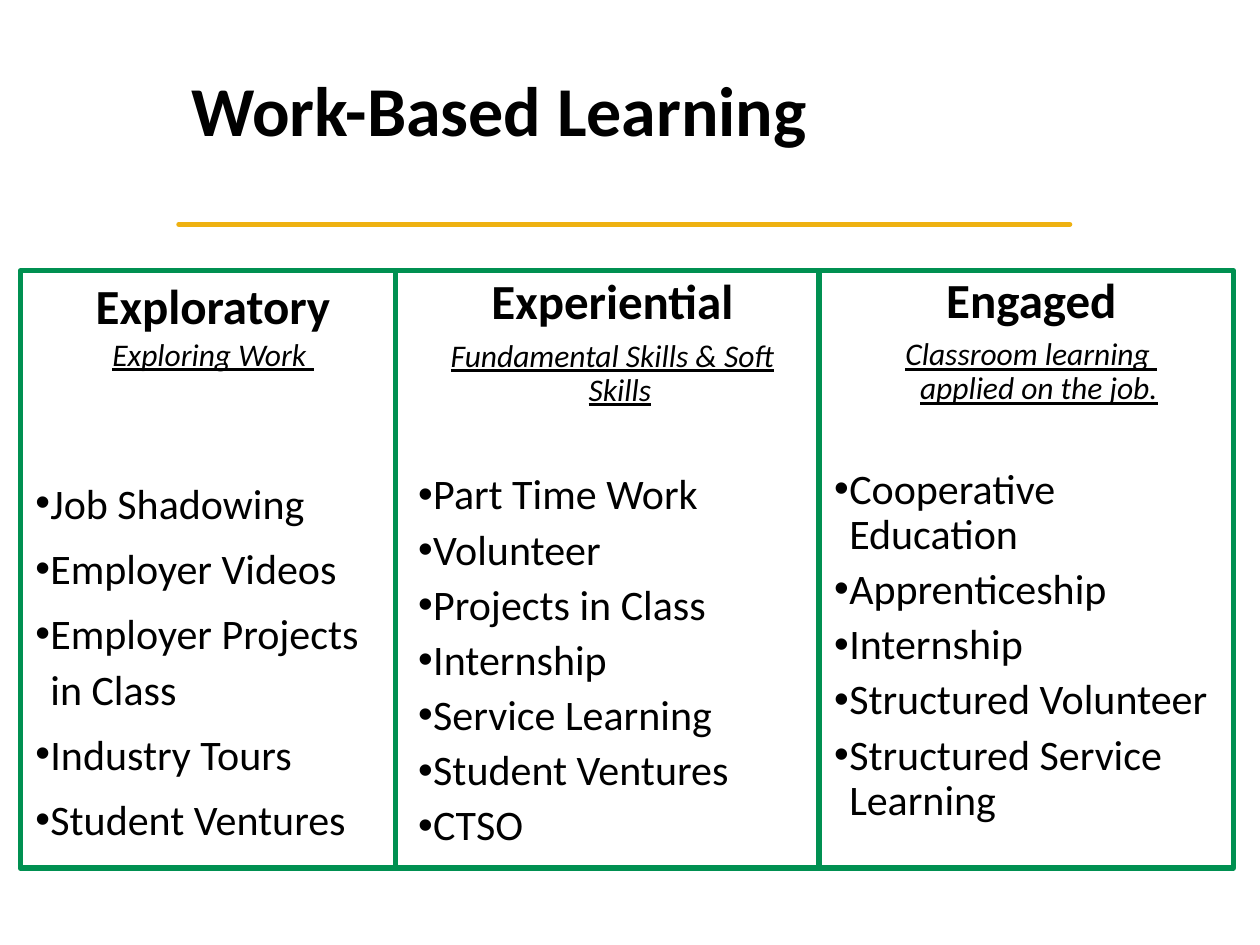
from dataclasses import dataclass

from lxml import etree
from pptx import Presentation
from pptx.dml.color import RGBColor
from pptx.enum.shapes import MSO_CONNECTOR, MSO_SHAPE
from pptx.enum.text import MSO_ANCHOR, MSO_AUTO_SIZE, PP_ALIGN
from pptx.oxml.ns import qn
from pptx.util import Inches, Pt

STRAIGHT = MSO_CONNECTOR.STRAIGHT
RECTANGLE = MSO_SHAPE.RECTANGLE
TOP, MIDDLE = MSO_ANCHOR.TOP, MSO_ANCHOR.MIDDLE
LEFT, CENTER = PP_ALIGN.LEFT, PP_ALIGN.CENTER
FIXED_SIZE = MSO_AUTO_SIZE.NONE

COLORS = {"text": "000000", "border": "009051", "rule": "EEB111"}
FONT = "Calibri"
COLUMN_TOP, COLUMN_HEIGHT = 2.15, 4.74
GAP = 5.6


@dataclass
class Column:
    left: float
    width: float
    heading: str
    summary: str
    items: list[str]
    list_gap: float
    header_gap: float = GAP
    header_spacing: float = 0.9
    item_spacing: float = 0.9
    side_inset: float = 0.04
    top_inset: float = 0.04


COLUMNS = [
    Column(0.16, 2.98, "Exploratory", "Exploring Work ",
           ["Job Shadowing", "Employer Videos", "Employer Projects in Class",
            "Industry Tours", "Student Ventures"],
           list_gap=56.9, header_gap=0, header_spacing=1.0, item_spacing=1.1),
    Column(3.14, 3.36, "Experiential", "Fundamental Skills & Soft Skills",
           ["Part Time Work", "Volunteer", "Projects in Class", "Internship",
            "Service Learning", "Student Ventures", "CTSO"],
           list_gap=37.6, side_inset=0.1, top_inset=0.05),
    Column(6.5, 3.29, "Engaged", "Classroom learning \vapplied on the job.",
           ["Cooperative Education", "Apprenticeship", "Internship",
            "Structured Volunteer", "Structured Service Learning"],
           list_gap=34.9),
]


def color(name: str) -> RGBColor:
    return RGBColor.from_string(COLORS[name])


def format_runs(para, size: float, bold: bool = False, accent: bool = False) -> None:
    for span in para.runs:
        font = span.font
        font.name, font.size, font.bold = FONT, Pt(size), bold
        font.italic = font.underline = accent
        font.color.rgb = color("text")


def format_paragraph(para, align, spacing: float, before: float, bullet: bool = False) -> None:
    properties = para._p.get_or_add_pPr()
    properties.set("marL", str(Inches(0.2)))
    properties.set("indent", str(Inches(-0.12)))
    if bullet:
        etree.SubElement(properties, qn("a:buFont")).set("typeface", "Arial")
        etree.SubElement(properties, qn("a:buChar")).set("char", "•")
    para.alignment = align
    para.line_spacing = spacing
    para.space_before = Pt(before)


def add_title(page, text: str) -> None:
    title = page.shapes.title
    title.left, title.top = Inches(1.42), Inches(0.18)
    title.width, title.height = Inches(8.05), Inches(1.45)
    frame = title.text_frame
    frame.text = text
    frame.word_wrap = True
    frame.auto_size = FIXED_SIZE
    frame.vertical_anchor = MIDDLE
    para = frame.paragraphs[0]
    para.alignment = LEFT
    para.line_spacing = 0.9
    format_runs(para, 40, bold=True)


def add_rule(page) -> None:
    rule = page.shapes.add_connector(
        STRAIGHT, Inches(1.42), Inches(1.78), Inches(8.49), Inches(1.78))
    rule.line.color.rgb = color("rule")
    rule.line.width = Pt(3)
    rule.line._get_or_add_ln().set("cap", "rnd")
    etree.SubElement(rule._element.spPr, qn("a:effectLst"))


def add_column(page, column: Column) -> None:
    box = page.shapes.add_shape(
        RECTANGLE, Inches(column.left), Inches(COLUMN_TOP),
        Inches(column.width), Inches(COLUMN_HEIGHT))
    box.shadow.inherit = False
    box.fill.background()
    box.line.color.rgb = color("border")
    box.line.width = Pt(3)
    frame = box.text_frame
    frame.word_wrap = True
    frame.vertical_anchor = TOP
    frame.margin_left = frame.margin_right = Inches(column.side_inset)
    frame.margin_top = frame.margin_bottom = Inches(column.top_inset)

    heading = frame.paragraphs[0]
    heading.text = column.heading
    format_paragraph(heading, CENTER, column.header_spacing, 0)
    format_runs(heading, 28, bold=True)

    summary = frame.add_paragraph()
    summary.text = column.summary
    format_paragraph(summary, CENTER, column.header_spacing, column.header_gap)
    format_runs(summary, 18, accent=True)

    for index, item in enumerate(column.items):
        para = frame.add_paragraph()
        para.text = item
        before = GAP if index else column.list_gap
        format_paragraph(para, LEFT, column.item_spacing, before, bullet=True)
        format_runs(para, 24)


def main() -> None:
    deck = Presentation()
    deck.slide_width, deck.slide_height = Inches(10), Inches(7.5)
    page = deck.slides.add_slide(deck.slide_layouts.get_by_name("Title Only"))
    add_title(page, "Work-Based Learning")
    add_rule(page)
    for column in COLUMNS:
        add_column(page, column)
    deck.save("out.pptx")


if __name__ == "__main__":
    main()
